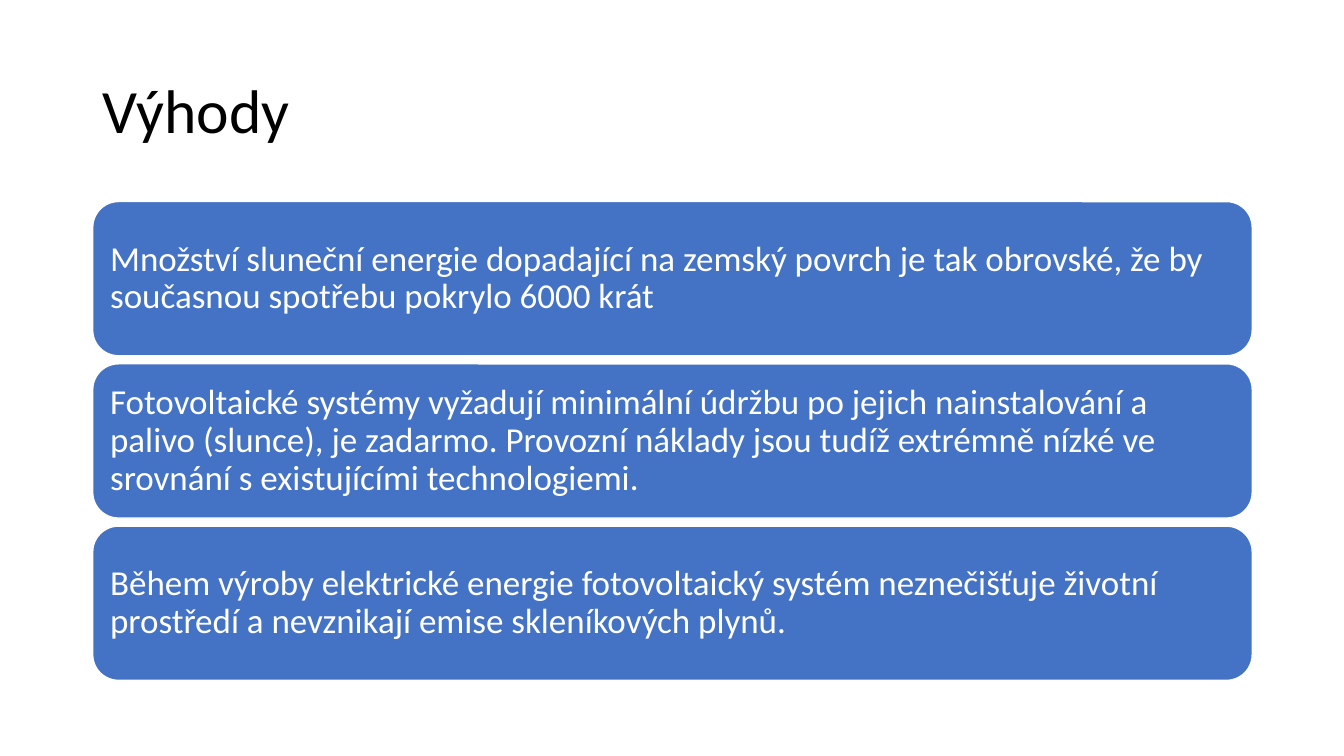
from pptx import Presentation
from pptx.dml.color import RGBColor
from pptx.enum.shapes import MSO_SHAPE
from pptx.enum.text import MSO_ANCHOR, PP_ALIGN
from pptx.util import Pt

EMU_PER_PX = 9144  # 100 px to the inch
COLORS = {"title": "000000", "card": "4472C4", "white": "FFFFFF"}
LEFT, WIDTH = 92, 1150
CARD_TOP, CARD_HEIGHT, CARD_GAP = 200, 153, 8
ADVANTAGES = [
    "Množství sluneční energie dopadající na zemský povrch je tak obrovské, "
    "že by současnou spotřebu pokrylo 6000 krát",
    "Fotovoltaické systémy vyžadují minimální údržbu po jejich nainstalování a "
    "palivo (slunce), je zadarmo. Provozní náklady jsou tudíž extrémně nízké ve "
    "srovnání s existujícími technologiemi.",
    "Během výroby elektrické energie fotovoltaický systém neznečišťuje životní "
    "prostředí a nevznikají emise skleníkových plynů.",
]


def px(*lengths):
    return [length * EMU_PER_PX for length in lengths]


def rgb(name):
    return RGBColor.from_string(COLORS[name])


class SlideBuilder:
    """Holds the text style and the slide being filled."""

    font_name = "Calibri"
    line_spacing = 0.9

    def __init__(self, slide):
        self.slide = slide

    def add_text(self, shape, text, size, color, inset_x, inset_y):
        frame = shape.text_frame
        frame.word_wrap = True
        frame.vertical_anchor = MSO_ANCHOR.MIDDLE
        frame.margin_left, frame.margin_right = px(inset_x, inset_x)
        frame.margin_top, frame.margin_bottom = px(inset_y, inset_y)
        paragraph = frame.paragraphs[0]
        paragraph.alignment = PP_ALIGN.LEFT
        paragraph.line_spacing = self.line_spacing
        run = paragraph.add_run()
        run.text = text
        run.font.name = self.font_name
        run.font.size = Pt(size)
        run.font.color.rgb = rgb(color)

    def title(self, text, left, top, width, height):
        box = self.slide.shapes.add_textbox(*px(left, top, width, height))
        self.add_text(box, text, 44, "title", 10, 5)

    def card(self, text, left, top, width, height):
        card = self.slide.shapes.add_shape(
            MSO_SHAPE.ROUNDED_RECTANGLE, *px(left, top, width, height))
        card.shadow.inherit = False
        card.fill.solid()
        card.fill.fore_color.rgb = rgb("card")
        card.line.color.rgb = rgb("white")
        card.line.width = Pt(1)
        self.add_text(card, text, 25, "white", 10, 10)


def main():
    presentation = Presentation()
    presentation.slide_width, presentation.slide_height = px(1333, 750)
    blank_layout = presentation.slide_layouts[6]
    builder = SlideBuilder(presentation.slides.add_slide(blank_layout))

    builder.title("Výhody", LEFT, 40, WIDTH, 145)
    for index, advantage in enumerate(ADVANTAGES):
        top = CARD_TOP + index * (CARD_HEIGHT + CARD_GAP)
        builder.card(advantage, LEFT, top, WIDTH, CARD_HEIGHT)

    presentation.save("out.pptx")


if __name__ == "__main__":
    main()
